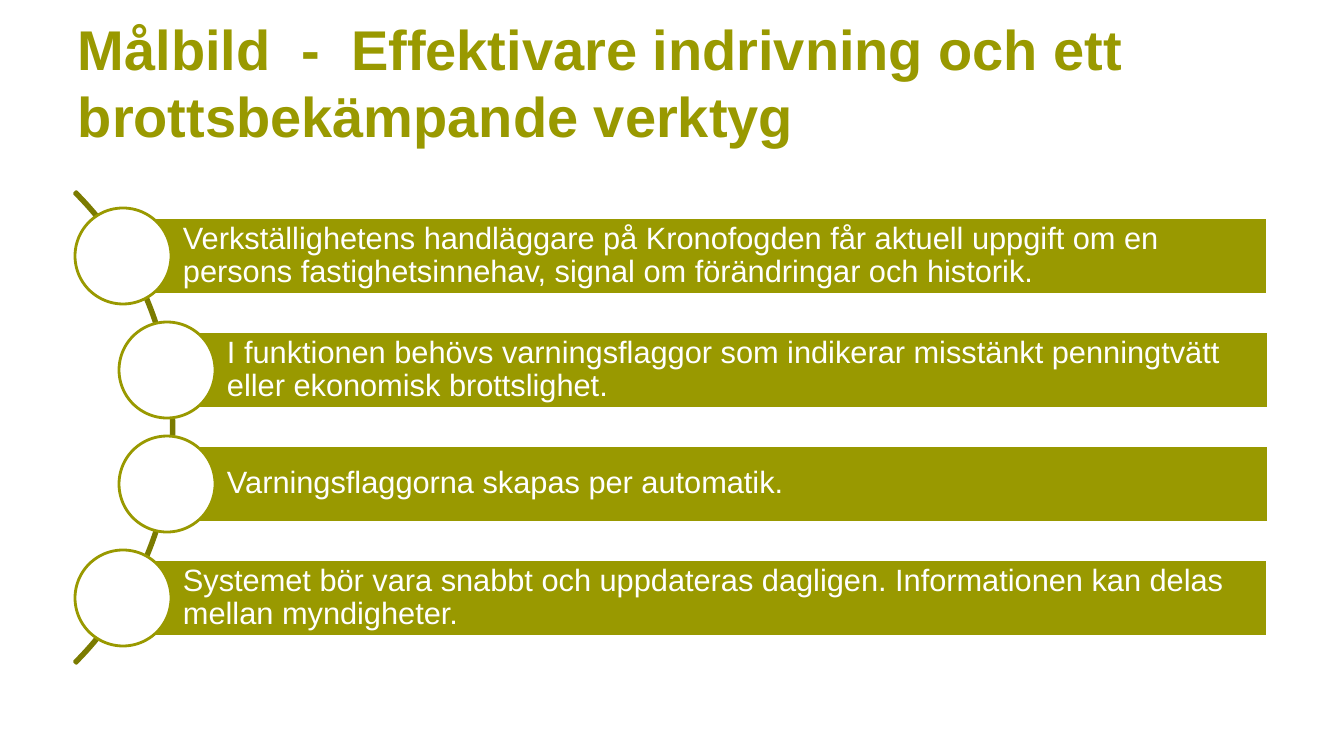
import pptx
import pptx.util
import pptx.dml.color
import pptx.enum.shapes
import pptx.enum.text

TITLE = "Målbild  -  Effektivare indrivning och ett brottsbekämpande verktyg"
GOALS = [
    (123, "Verkställighetens handläggare på Kronofogden får aktuell uppgift om en "
          "persons fastighetsinnehav, signal om förändringar och historik."),
    (167, "I funktionen behövs varningsflaggor som indikerar misstänkt penningtvätt "
          "eller ekonomisk brottslighet."),
    (167, "Varningsflaggorna skapas per automatik."),
    (123, "Systemet bör vara snabbt och uppdateras dagligen. Informationen kan delas "
          "mellan myndigheter."),
]
OLIVE, DARK, WHITE = "999900", "7B7B00", "FFFFFF"
TOP, STEP, HIGH, RIGHT, DOT = 218, 114, 76, 1268, 96
SCALE = 914400 / 100.8
KIND = pptx.enum.shapes.MSO_SHAPE


def px(num):
    return pptx.util.Emu(round(num * SCALE))


def color(code):
    return pptx.dml.color.RGBColor.from_string(code)


def shape(kind, box, fill, line):
    item = slide.shapes.add_shape(kind, *map(px, box))
    item.shadow.inherit = False
    if fill:
        item.fill.solid()
        item.fill.fore_color.rgb = color(fill)
    else:
        item.fill.background()
    item.line.color.rgb = color(line)
    item.line.width = pptx.util.Pt(2)
    return item


def write(item, text, size, tint, bold, pads):
    frame = item.text_frame
    frame.word_wrap = True
    frame.vertical_anchor = pptx.enum.text.MSO_ANCHOR.MIDDLE
    frame.margin_left, frame.margin_top, frame.margin_right, frame.margin_bottom = map(px, pads)
    para = frame.paragraphs[0]
    para.text = text
    para.alignment = pptx.enum.text.PP_ALIGN.LEFT
    para.font.name = "Arial"
    para.font.size = pptx.util.Pt(size)
    para.font.bold = bold
    para.font.color.rgb = color(tint)
    return para


deck = pptx.Presentation()
deck.slide_width, deck.slide_height = px(1344), px(756)
slide = deck.slides.add_slide(deck.slide_layouts[6])

arc = shape(KIND.BLOCK_ARC, (-493, 94, 667, 667), None, DARK)
for spot, value in enumerate((189, 27, 0.004)):
    arc.adjustments[spot] = value

for row, (left, text) in enumerate(GOALS):
    top = TOP + row * STEP
    bar = shape(KIND.RECTANGLE, (left, top, RIGHT - left, HIGH), OLIVE, WHITE)
    write(bar, text, 22, WHITE, False, (60, 6, 6, 6)).line_spacing = 0.9
    shape(KIND.OVAL, (left - DOT / 2, top + (HIGH - DOT) / 2, DOT, DOT), WHITE, OLIVE)

title = slide.shapes.add_textbox(*map(px, (68, 30, 1208, 103)))
write(title, TITLE, 40, OLIVE, True, (10, 5, 10, 5))

deck.save("out.pptx")
